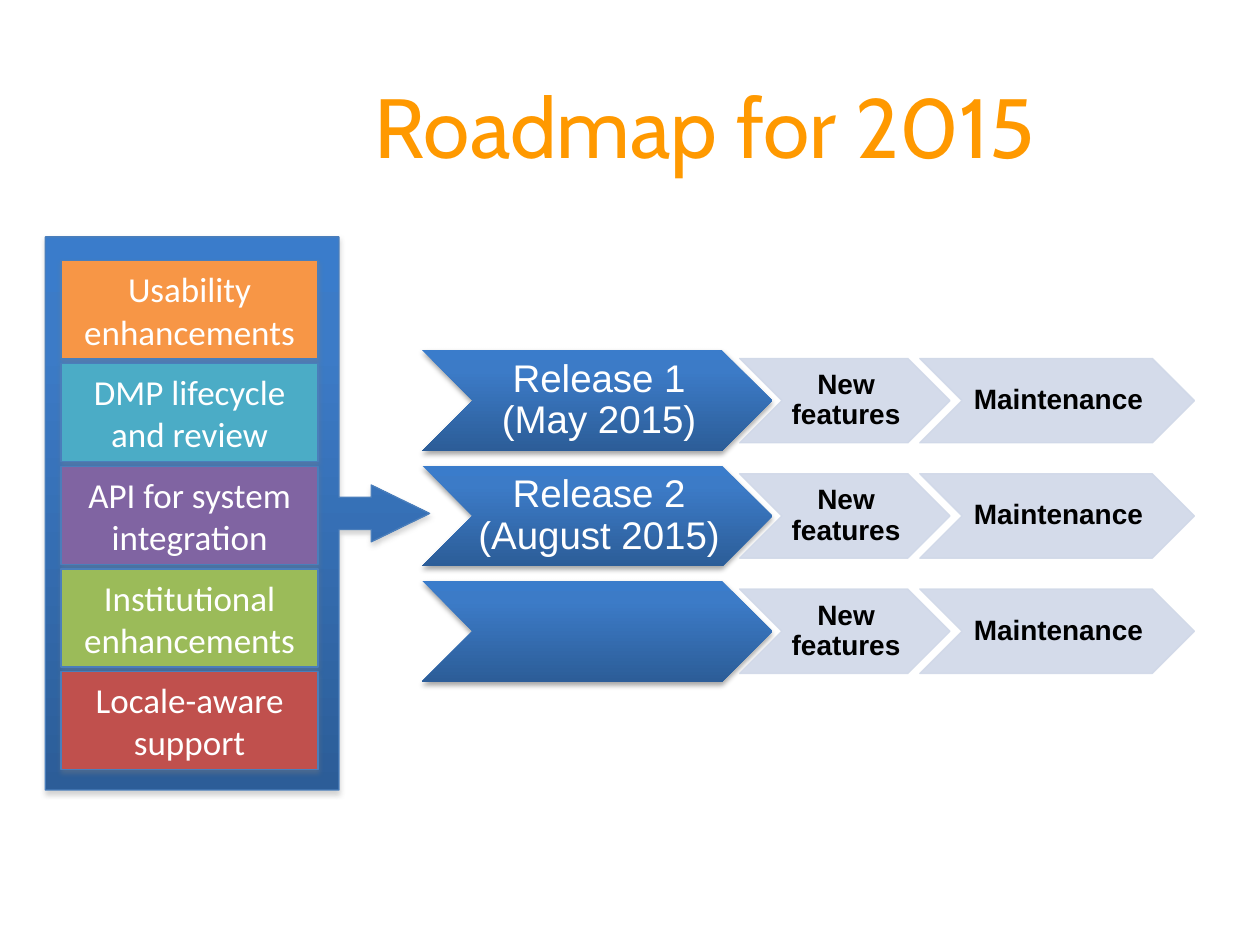
from dataclasses import dataclass

from lxml import etree
from pptx import Presentation
from pptx.dml.color import RGBColor
from pptx.enum.shapes import MSO_SHAPE
from pptx.enum.text import MSO_ANCHOR, PP_ALIGN
from pptx.oxml.ns import qn
from pptx.util import Inches, Pt

RECTANGLE = MSO_SHAPE.RECTANGLE
CHEVRON = MSO_SHAPE.CHEVRON
CALLOUT = MSO_SHAPE.RIGHT_ARROW_CALLOUT
CENTER = PP_ALIGN.CENTER
MIDDLE = MSO_ANCHOR.MIDDLE
TITLE_ONLY = 5


@dataclass(frozen=True)
class Theme:
    title: str = "FF9900"
    white: str = "FFFFFF"
    black: str = "000000"
    outline: str = "4A7EBB"
    step: str = "D0D8E8"
    gray_shadow: str = "808080"
    gradient: tuple = ((0, "3A7CCB"), (20, "3C7BC7"), (100, "2C5D98"))
    title_font: str = "Cabin"
    topic_font: str = "Calibri"
    release_font: str = "Arial"
    title_size: int = 48
    release_size: int = 22
    topic_size: int = 20
    step_size: int = 16


THEME = Theme()

TOPICS = [
    ("Usability enhancements", "F79646"),
    ("DMP lifecycle and review", "4BACC6"),
    ("API for system integration", "8064A2"),
    ("Institutional enhancements", "9BBB59"),
    ("Locale-aware support", "C0504D"),
]
RELEASES = [("Release 1", "(May 2015)"), ("Release 2", "(August 2015)"), ()]
STEPS = [("New features", 5.87, 1.67), ("Maintenance", 7.3, 2.18)]


def add_shape(page, kind, left, top, width, height):
    shape = page.shapes.add_shape(
        kind, Inches(left), Inches(top), Inches(width), Inches(height))
    shape.shadow.inherit = False
    shape.line.fill.background()
    return shape


def set_outline(shape, color):
    shape.line.color.rgb = RGBColor.from_string(color)
    shape.line.width = Pt(0.75)


def set_solid(shape, color):
    shape.fill.solid()
    shape.fill.fore_color.rgb = RGBColor.from_string(color)


def add_color(parent, color):
    return etree.SubElement(parent, qn("a:srgbClr"), val=color)


def set_opacity(shape, percent):
    """Apply one opacity to the fill and the outline."""
    for color in shape.element.spPr.iter(qn("a:srgbClr")):
        etree.SubElement(color, qn("a:alpha"), val=str(percent * 1000))


def set_gradient(shape):
    """Shade from light at the top to dark at the bottom."""
    shape.fill.gradient()
    shape.fill.gradient_angle = 270
    stops = shape.element.spPr.find(".//" + qn("a:gsLst"))
    for stop in list(stops):
        stops.remove(stop)
    for position, color in THEME.gradient:
        stop = etree.SubElement(stops, qn("a:gs"), pos=str(position * 1000))
        add_color(stop, color)


def add_shadow(shape, color):
    effects = shape.element.spPr.find(qn("a:effectLst"))
    shadow = etree.SubElement(
        effects, qn("a:outerShdw"), blurRad=str(Pt(3.1)), dist=str(Pt(1.8)),
        dir="5400000", rotWithShape="0")
    etree.SubElement(add_color(shadow, color), qn("a:alpha"), val="35000")


def write(shape, lines, font, size, color, bold=False):
    """Write centred lines, parted by line breaks, in one paragraph."""
    frame = shape.text_frame
    frame.word_wrap = True
    frame.vertical_anchor = MIDDLE
    para = frame.paragraphs[0]
    para.alignment = CENTER
    for number, line in enumerate(lines):
        if number:
            para.add_line_break()
        span = para.add_run()
        span.text = line
        span.font.name = font
        span.font.size = Pt(size)
        span.font.bold = bold
        span.font.color.rgb = RGBColor.from_string(color)
    return para


def tighten(shape, para, left, vertical):
    """Give a chevron narrow margins and close line spacing."""
    frame = shape.text_frame
    frame.margin_left, frame.margin_right = Inches(left), 0
    frame.margin_top = frame.margin_bottom = Inches(vertical)
    para.line_spacing = 0.9


def add_title(page):
    title = page.shapes.title
    title.left, title.top = Inches(1.3), Inches(0.52)
    title.width, title.height = Inches(8.59), Inches(0.94)
    write(title, ["Roadmap for 2015"], THEME.title_font, THEME.title_size,
          THEME.title)


def add_callout(page):
    callout = add_shape(page, CALLOUT, 0.36, 1.88, 3.05, 4.39)
    for index, value in enumerate((0.084, 0.074, 0.152, 0.764)):
        callout.adjustments[index] = value
    set_gradient(callout)
    set_outline(callout, THEME.outline)
    add_shadow(callout, THEME.gray_shadow)


def add_topic(page, top, label, color):
    topic = add_shape(page, RECTANGLE, 0.485, top, 2.04, 0.78)
    set_solid(topic, color)
    set_outline(topic, THEME.outline)
    add_shadow(topic, THEME.gray_shadow)
    write(topic, [label], THEME.topic_font, THEME.topic_size, THEME.white)


def add_release(page, top, lines):
    release = add_shape(page, CHEVRON, 3.35, top, 2.78, 0.8)
    set_gradient(release)
    add_shadow(release, THEME.black)
    if lines:
        para = write(release, lines, THEME.release_font, THEME.release_size,
                     THEME.white)
        tighten(release, para, 0.03, 0.02)


def add_step(page, left, top, width, label):
    step = add_shape(page, CHEVRON, left, top, width, 0.67)
    set_solid(step, THEME.step)
    set_outline(step, THEME.step)
    set_opacity(step, 90)
    para = write(step, [label], THEME.release_font, THEME.step_size,
                 THEME.black, bold=True)
    tighten(step, para, 0.02, 0.01)


def main():
    deck = Presentation()
    deck.slide_width, deck.slide_height = Inches(10), Inches(7.5)
    page = deck.slides.add_slide(deck.slide_layouts[TITLE_ONLY])
    add_title(page)
    add_callout(page)
    for row, lines in enumerate(RELEASES):
        top = 2.78 + row * 0.915
        add_release(page, top, lines)
        for label, left, width in STEPS:
            add_step(page, left, top + 0.065, width, label)
    for row, (label, color) in enumerate(TOPICS):
        add_topic(page, 2.07 + row * 0.815, label, color)
    deck.save("out.pptx")


if __name__ == "__main__":
    main()
